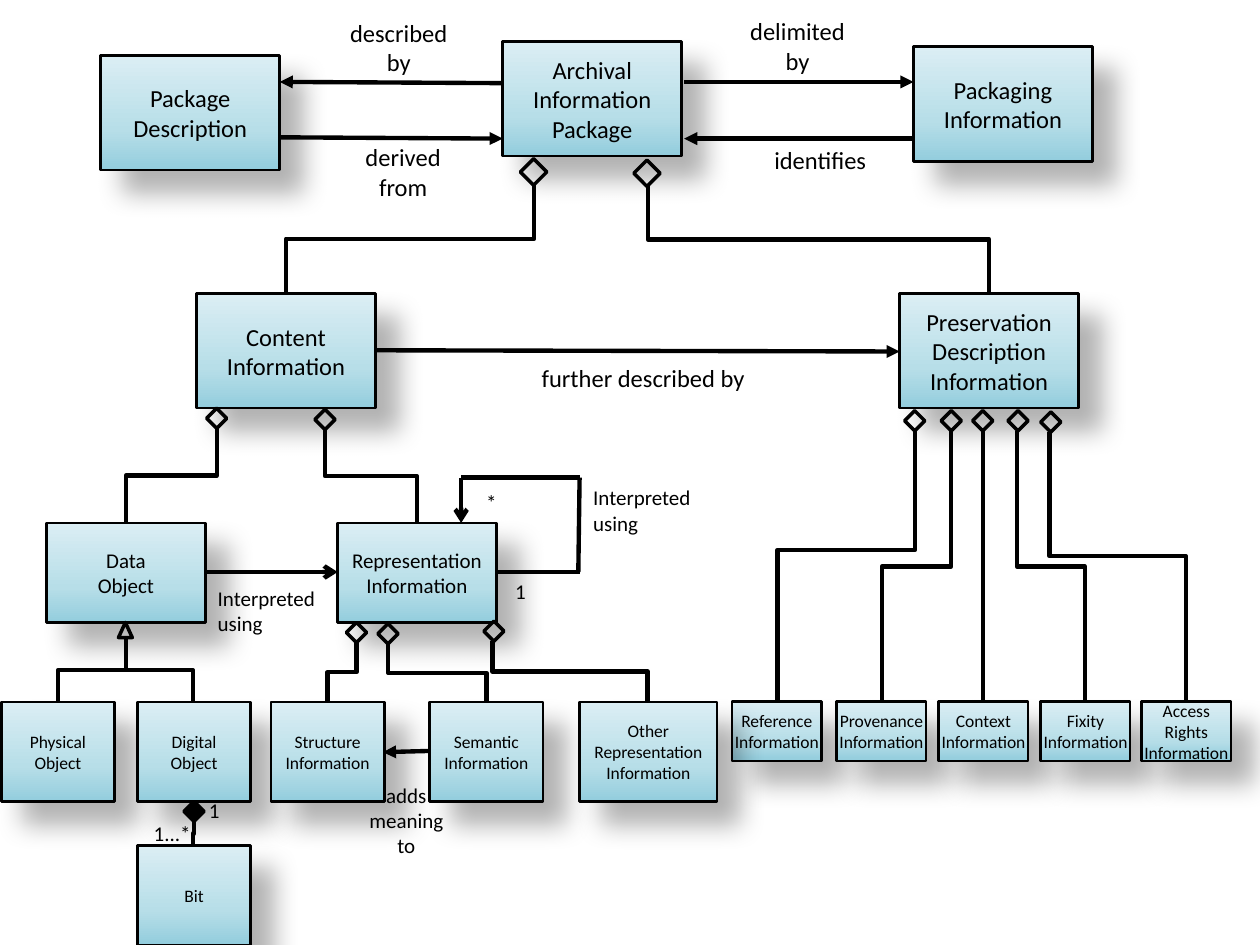
from lxml.etree import SubElement
from pptx import Presentation
from pptx.dml.color import RGBColor
from pptx.enum.shapes import MSO_CONNECTOR as Line, MSO_SHAPE as Preset
from pptx.enum.text import MSO_ANCHOR as Anchor, PP_ALIGN as Align
from pptx.oxml import parse_xml
from pptx.oxml.ns import nsdecls, qn
from pptx.util import Inches, Pt

BLACK = "000000"
GRADIENT = [(0, "93CDDD"), (35, "B7DEE8"), (100, "DBEEF4")]
LEAF_TOP = 5.57

# size name: width, height, text size, inset
SIZES = {
    "large": (1.42, 0.91, 14, 0.1),
    "medium": (1.26, 0.79, 12, 0.1),
    "small": (0.9, 0.79, 10, 0.1),
    "wide": (1.09, 0.79, 10, 0.1),
    "flat": (0.71, 0.47, 10, 0),
}
BOXES = [
    ("large", 3.99, 0.33, "Archival Information Package"),
    ("large", 7.14, 2.33, "Preservation Description\nInformation"),
    ("large", 1.56, 2.33, "Content Information"),
    ("large", 0.8, 0.44, "Package Description"),
    ("large", 7.25, 0.37, "Packaging Information"),
    ("medium", 0.37, 4.15, "Data\nObject"),
    ("medium", 2.68, 4.15, "Representation\nInformation"),
    ("small", 0.01, LEAF_TOP, "Physical Object"),
    ("small", 1.09, LEAF_TOP, "Digital Object"),
    ("small", 2.15, LEAF_TOP, "Structure Information"),
    ("small", 3.41, LEAF_TOP, "Semantic Information"),
    ("flat", 5.81, LEAF_TOP, "Reference Information"),
    ("flat", 6.64, LEAF_TOP, "Provenance Information"),
    ("flat", 7.45, LEAF_TOP, "Context Information"),
    ("flat", 8.26, LEAF_TOP, "Fixity Information"),
    ("wide", 4.6, LEAF_TOP, "Other Representation Information"),
    ("small", 1.09, 6.71, "Bit"),
    ("flat", 9.06, LEAF_TOP, "Access Rights Information"),
]
# left, top, size of the open diamonds
DIAMONDS = [
    (5.03, 1.27, 0.21), (4.13, 1.26, 0.21),
    (1.64, 3.24, 0.16), (2.5, 3.25, 0.16),
    (7.18, 3.26, 0.16), (7.47, 3.26, 0.16), (7.72, 3.26, 0.16),
    (8, 3.26, 0.16), (8.26, 3.27, 0.16),
    (3.84, 4.93, 0.16), (3, 4.95, 0.16), (2.75, 4.94, 0.16),
]
# upper x, y, lower x, y, share of the height where the branch turns
BRANCHES = [
    (5.14, 1.47, 7.85, 2.33, 0.5),
    (4.24, 1.46, 2.27, 2.33, 0.5),
    (1.72, 3.4, 1, 4.15, 0.5),
    (2.58, 3.41, 3.31, 4.15, 0.5),
    (1, 5.07, 0.46, LEAF_TOP, 0.5),
    (1, 5.07, 1.53, LEAF_TOP, 0.5),
    (7.26, 3.42, 6.17, LEAF_TOP, 0.44),
    (7.55, 3.42, 7, LEAF_TOP, 0.5),
    (7.8, 3.42, 7.8, LEAF_TOP, 0.5),
    (8.07, 3.42, 8.61, LEAF_TOP, 0.5),
    (8.33, 3.43, 9.41, LEAF_TOP, 0.46),
    (1.54, 6.52, 1.53, 6.71, 0.5),
    (2.83, 5.1, 2.6, LEAF_TOP, 0.5),
    (3.08, 5.11, 3.86, LEAF_TOP, 0.5),
    (3.91, 5.09, 5.14, LEAF_TOP, 0.5),
]
# from x, y, to x, y, arrowhead
ARROWS = [
    (2.98, 2.78, 7.14, 2.79, "triangle"),
    (2.22, 1.09, 3.99, 1.1, "triangle"),
    (3.99, 0.66, 2.22, 0.65, "triangle"),
    (5.43, 0.65, 7.25, 0.65, "triangle"),
    (7.25, 1.1, 5.43, 1.1, "triangle"),
    (1.63, 4.54, 2.68, 4.54, "arrow"),
    (3.41, 5.96, 3.04, 5.97, "triangle"),
    (3.94, 4.54, 4.6, 4.54, None),
    (4.59, 4.54, 4.6, 3.79, None),
    (4.6, 3.79, 3.66, 3.79, None),
    (3.66, 3.79, 3.66, 4.15, "arrow"),
]
# left, top, width, height, text, text size, alignment, inset
LABELS = [
    (4.2, 2.83, 2.51, 0.34, "further described by", 14, Align.LEFT, 0.1),
    (1.63, 4.6, 1.26, 0.5, "Interpreted using", 12, Align.LEFT, 0.1),
    (2.8, 6.16, 0.85, 0.71, "adds meaning to", 12, Align.CENTER, 0.1),
    (4.61, 3.8, 1.26, 0.5, "Interpreted using", 12, Align.LEFT, 0.1),
    (3.99, 4.54, 0.35, 0.3, "1", 12, Align.LEFT, 0.1),
    (3.76, 3.84, 0.35, 0.3, "*", 12, Align.LEFT, 0.1),
    (1.56, 6.28, 0.35, 0.3, "1", 12, Align.LEFT, 0.1),
    (1.22, 6.51, 0.48, 0.2, "1...*", 12, Align.LEFT, 0),
    (2.28, 0.09, 1.77, 0.57, "described\nby", 14, Align.CENTER, 0.1),
    (5.42, 0.08, 1.82, 0.57, "delimited\nby", 14, Align.CENTER, 0.1),
    (2.71, 1.08, 0.98, 0.57, "derived\nfrom", 14, Align.CENTER, 0.1),
    (5.59, 1.1, 1.84, 0.34, "identifies", 14, Align.CENTER, 0.1),
]


def color(value):
    return RGBColor.from_string(value)


def write_text(shape, text, size, alignment, anchor, inset):
    frame = shape.text_frame
    frame.word_wrap = True
    frame.vertical_anchor = anchor
    frame.margin_left = frame.margin_right = Inches(inset)
    frame.margin_top = frame.margin_bottom = Inches(inset / 2)
    for index, line in enumerate(text.split("\n")):
        paragraph = frame.add_paragraph() if index else frame.paragraphs[0]
        paragraph.alignment = alignment
        run = paragraph.add_run()
        run.text = line
        run.font.name = "Calibri"
        run.font.size = Pt(size)
        run.font.color.rgb = color(BLACK)


def set_line(shape, width):
    shape.line.color.rgb = color(BLACK)
    shape.line.width = Pt(width)


def add_box(slide, size, left, top, text):
    width, height, text_size, inset = SIZES[size]
    shape = slide.shapes.add_shape(
        Preset.RECTANGLE, Inches(left), Inches(top), Inches(width), Inches(height))
    set_line(shape, 1.5)
    stops = "".join(f'<a:gs pos="{position * 1000}"><a:srgbClr val="{value}"/></a:gs>'
                    for position, value in GRADIENT)
    properties = shape._element.spPr
    properties.find(qn("a:prstGeom")).addnext(parse_xml(
        f'<a:gradFill {nsdecls("a")} rotWithShape="1"><a:gsLst>{stops}</a:gsLst>'
        '<a:lin ang="16200000" scaled="0"/></a:gradFill>'))
    properties.append(parse_xml(
        f'<a:effectLst {nsdecls("a")}><a:outerShdw blurRad="{Pt(15)}" dist="{Pt(18)}" '
        f'dir="2700000" algn="tl" rotWithShape="0"><a:srgbClr val="{BLACK}">'
        '<a:alpha val="30000"/></a:srgbClr></a:outerShdw></a:effectLst>'))
    write_text(shape, text, text_size, Align.CENTER, Anchor.MIDDLE, inset)


def add_mark(slide, preset, left, top, width, height, fill=None):
    shape = slide.shapes.add_shape(
        preset, Inches(left), Inches(top), Inches(width), Inches(height))
    shape.shadow.inherit = False
    if fill:
        shape.fill.solid()
        shape.fill.fore_color.rgb = color(fill)
    else:
        shape.fill.background()
    set_line(shape, 2)


def add_line(slide, kind, x1, y1, x2, y2, head=None):
    connector = slide.shapes.add_connector(
        kind, Inches(x1), Inches(y1), Inches(x2), Inches(y2))
    set_line(connector, 2.5)
    if head:
        SubElement(connector.line._get_or_add_ln(), qn("a:tailEnd"), type=head)
    SubElement(connector._element.spPr, qn("a:effectLst"))
    return connector


def add_branch(slide, x1, y1, x2, y2, turn):
    """Draw a down-across-down elbow: a turned across-down-across one."""
    middle_x, middle_y = (x1 + x2) / 2, (y1 + y2) / 2
    half_width, half_height = (y2 - y1) / 2, abs(x2 - x1) / 2
    rightward = x2 > x1
    reach = -half_width if rightward else half_width
    connector = add_line(slide, Line.ELBOW, middle_x - reach, middle_y - half_height,
                         middle_x + reach, middle_y + half_height)
    properties = connector._element.spPr
    properties.find(qn("a:xfrm")).set("rot", str((270 if rightward else 90) * 60000))
    adjustments = properties.find(qn("a:prstGeom")).get_or_add_avLst()
    SubElement(adjustments, qn("a:gd"), name="adj1", fmla=f"val {round(turn * 100000)}")


def add_label(slide, left, top, width, height, text, size, alignment, inset):
    box = slide.shapes.add_textbox(
        Inches(left), Inches(top), Inches(width), Inches(height))
    write_text(box, text, size, alignment, Anchor.TOP, inset)


def main():
    presentation = Presentation()
    presentation.slide_width, presentation.slide_height = Inches(10), Inches(7.5)
    slide = presentation.slides.add_slide(presentation.slide_layouts[6])
    for box in BOXES:
        add_box(slide, *box)
    for left, top, size in DIAMONDS:
        add_mark(slide, Preset.DIAMOND, left, top, size, size)
    add_mark(slide, Preset.DIAMOND, 1.46, 6.36, 0.16, 0.16, BLACK)
    add_mark(slide, Preset.ISOSCELES_TRIANGLE, 0.94, 4.94, 0.11, 0.12)
    for branch in BRANCHES:
        add_branch(slide, *branch)
    for arrow in ARROWS:
        add_line(slide, Line.STRAIGHT, *arrow)
    for label in LABELS:
        add_label(slide, *label)
    presentation.save("out.pptx")


if __name__ == "__main__":
    main()
